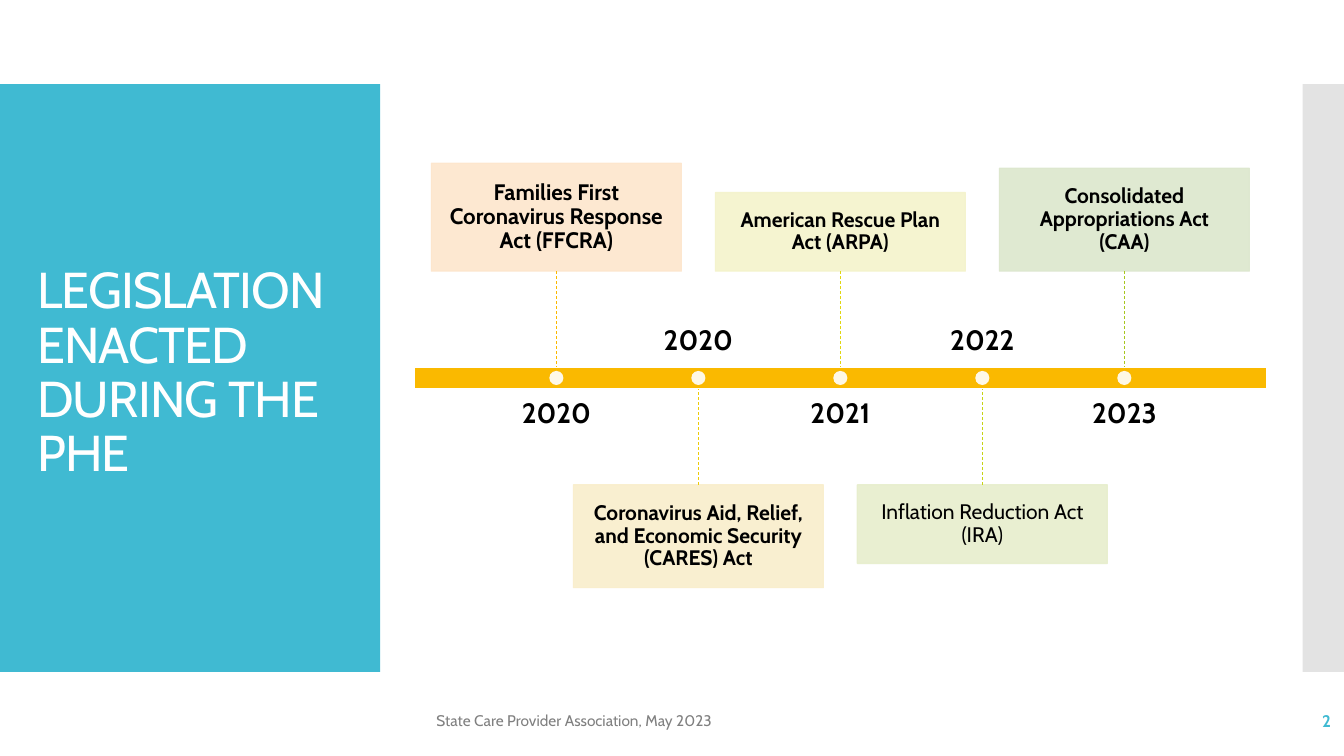
import pptx
import pptx.util
import pptx.dml.color
import pptx.enum.dml
import pptx.enum.shapes
import pptx.enum.text
import pptx.oxml
import pptx.oxml.ns

Inches = pptx.util.Inches
SHAPE = pptx.enum.shapes.MSO_SHAPE
ALIGN = pptx.enum.text.PP_ALIGN
ANCHOR = pptx.enum.text.MSO_ANCHOR

W, H = 13.33, 7.5
FONT = "Cabin"
COLORS = {
    "teal": "40BAD2", "side": "C8C8C8", "bar": "FAB900",
    "white": "FFFFFF", "black": "000000", "footer": "808080",
}
EVENTS = [
    {"year": "2020", "text": "Families First Coronavirus Response Act (FFCRA)",
     "fill": "FDE6CC", "line": "FAB900", "height": 1.07, "size": 16},
    {"year": "2020", "text": "Coronavirus Aid, Relief, and Economic Security (CARES) Act",
     "fill": "F9EECB", "line": "EDCA08", "height": 1.02},
    {"year": "2021", "text": "American Rescue Plan Act (ARPA)",
     "fill": "F4F3CB", "line": "E0D70F", "height": 0.78},
    {"year": "2022", "text": "Inflation Reduction Act (IRA)",
     "fill": "E7EECC", "line": "C7D316", "height": 0.78, "bold": False},
    {"year": "2023", "text": "Consolidated Appropriations Act (CAA)",
     "fill": "DCE7CD", "line": "A9C71D", "height": 1.02},
]


def rgb(value):
    """Turn a hex string into a colour."""
    return pptx.dml.color.RGBColor.from_string(value)


def set_alpha(fill_parent, percent):
    """Make the solid fill directly inside an element partly transparent."""
    clr = fill_parent.find(pptx.oxml.ns.qn("a:solidFill"))[0]
    alpha = pptx.oxml.parse_xml(f"<a:alpha {pptx.oxml.ns.nsdecls('a')}/>")
    alpha.set("val", str(percent * 1000))
    clr.append(alpha)


def write(sp, text, size=15, color="black", bold=False, align=ALIGN.LEFT,
          anchor=ANCHOR.MIDDLE, inset=(0.1, 0.05), leading=1.0, spacing=None):
    """Put one formatted paragraph into a shape."""
    tf = sp.text_frame
    tf.word_wrap = True
    tf.vertical_anchor = anchor
    tf.margin_left = tf.margin_right = Inches(inset[0])
    tf.margin_top = tf.margin_bottom = Inches(inset[1])
    p = tf.paragraphs[0]
    p.alignment = align
    p.line_spacing = leading
    r = p.add_run()
    r.text = text
    r.font.name = FONT
    r.font.size = pptx.util.Pt(size)
    r.font.bold = bold
    r.font.color.rgb = rgb(COLORS[color])
    if spacing is not None:
        r.font._element.set("spc", str(spacing))


def add_text(s, box, text, **fmt):
    """Add a text box with formatted text."""
    sp = s.shapes.add_textbox(*map(Inches, box))
    write(sp, text, **fmt)
    return sp


def add_block(s, kind, box, fill, line=None, alpha=100):
    """Add a flat preset shape."""
    sp = s.shapes.add_shape(kind, *map(Inches, box))
    sp.shadow.inherit = False
    sp.fill.solid()
    sp.fill.fore_color.rgb = rgb(fill)
    if line:
        sp.line.color.rgb = rgb(line)
        sp.line.width = pptx.util.Pt(0.85)
    else:
        sp.line.fill.background()
    if alpha < 100:
        set_alpha(sp._element.spPr, alpha)
        if line:
            set_alpha(sp.line._ln, alpha)
    return sp


def add_stem(s, x, y1, y2, color):
    """Add a thin dashed vertical connector."""
    cx = s.shapes.add_connector(pptx.enum.shapes.MSO_CONNECTOR.STRAIGHT,
                                Inches(x), Inches(y1), Inches(x), Inches(y2))
    cx.line.color.rgb = rgb(color)
    cx.line.width = pptx.util.Pt(0.5)
    cx.line.dash_style = pptx.enum.dml.MSO_LINE.DASH
    cx._element.spPr.append(
        pptx.oxml.parse_xml(f"<a:effectLst {pptx.oxml.ns.nsdecls('a')}/>"))
    return cx


def title_panel(s, box, title):
    """Draw the coloured panel with the slide title."""
    x, y, w, h = box
    add_block(s, SHAPE.RECTANGLE, box, COLORS["teal"])
    add_text(s, (x + 0.27, y + 0.36, w - 0.55, h - 0.8), title, size=36,
             color="white", leading=0.9, spacing=-60)


def timeline(s, box, events):
    """Draw the bar with evenly spaced events alternating above and below."""
    x, y, w, h = box
    step = w / (len(events) + 1)
    stem, dot, card_w = 0.95, 0.14, 2.48
    year_w, year_h, year_gap = 2.25, 0.63, 0.1
    bar = add_block(s, SHAPE.RECTANGLE, box, COLORS["bar"], COLORS["white"])
    for i, event in enumerate(events):
        mid = x + step * (i + 1)
        above = i % 2 == 0
        edge = y if above else y + h
        card_edge = y - stem if above else y + h + stem
        top = card_edge - event["height"] if above else card_edge
        card = add_block(s, SHAPE.RECTANGLE,
                         (mid - card_w / 2, top, card_w, event["height"]),
                         event["fill"], event["fill"], 90)
        write(card, event["text"], size=event.get("size", 15),
              bold=event.get("bold", True), align=ALIGN.CENTER,
              inset=(0.16, 0.16), leading=0.9)
        cx = add_stem(s, mid, card_edge, edge, event["line"])
        cx.begin_connect(card, 2 if above else 0)
        if i == len(events) // 2:
            cx.end_connect(bar, 0 if above else 2)
        add_block(s, SHAPE.OVAL,
                  (mid - dot / 2, y + (h - dot) / 2, dot, dot),
                  COLORS["white"], alpha=90)
        year_y = y + h + year_gap if above else y - year_gap - year_h
        add_text(s, (mid - year_w / 2, year_y, year_w, year_h), event["year"],
                 size=20, bold=True, align=ALIGN.CENTER, inset=(0, 0),
                 anchor=ANCHOR.TOP if above else ANCHOR.BOTTOM, leading=0.9)


def footer(s, box, text, number):
    """Write the footer text and the slide number."""
    x, y, w, h = box
    number_w = 1.67
    add_text(s, (x, y, 6.46, h), text, size=11, color="footer")
    add_text(s, (x + w - number_w, y, number_w, h), number, size=12,
             color="teal", bold=True, align=ALIGN.RIGHT)


def main():
    """Build and save the slide."""
    prs = pptx.Presentation()
    prs.slide_width, prs.slide_height = Inches(W), Inches(H)
    s = prs.slides.add_slide(prs.slide_layouts[6])
    band_y, band_h, side_w = H / 9, H * 7 / 9, 0.41
    title_panel(s, (0, band_y, 3.77, band_h), "LEGISLATION ENACTED DURING THE PHE")
    add_block(s, SHAPE.RECTANGLE, (W - side_w, band_y, side_w, band_h),
              COLORS["side"], alpha=50)
    timeline(s, (4.11, 3.64, 8.45, 0.22), EVENTS)
    footer(s, (4.23, 6.95, 9.07, 0.4),
           "State Care Provider Association, May 2023", "2")
    prs.save("out.pptx")


if __name__ == "__main__":
    main()
